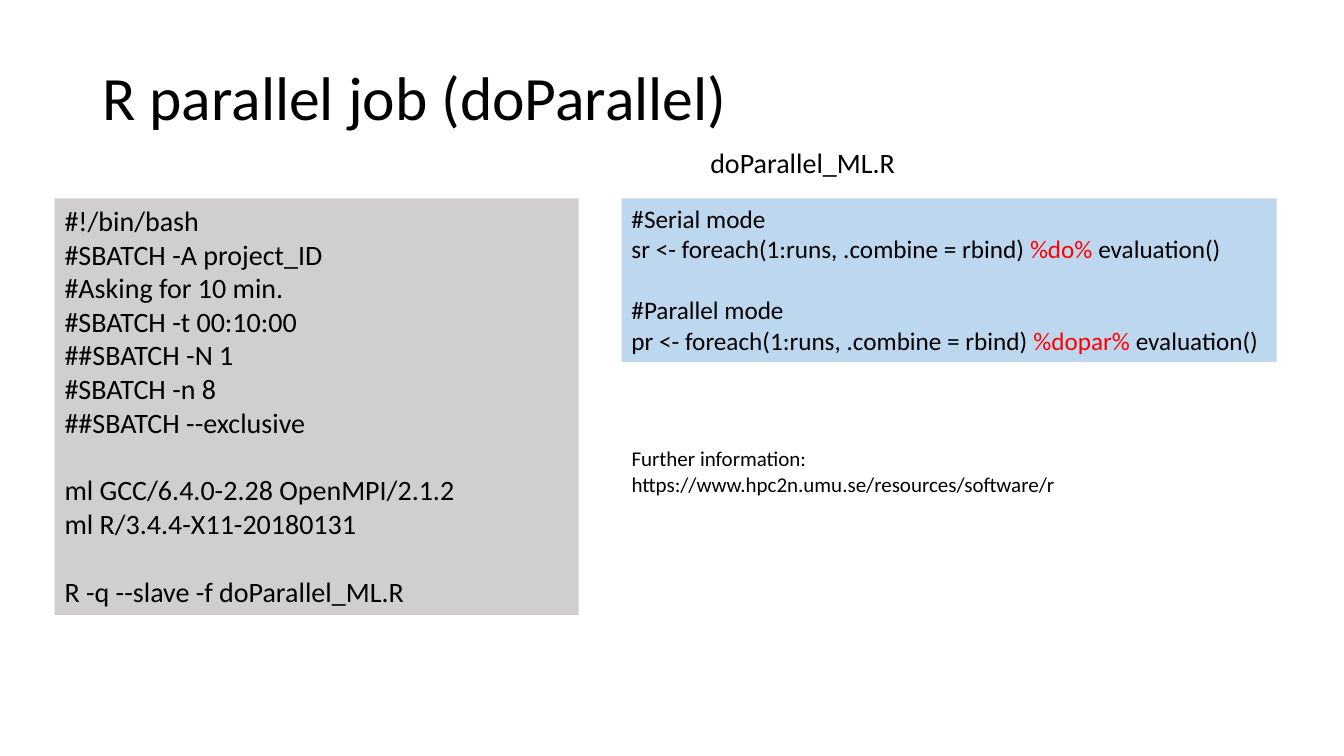
import pptx
import pptx.dml.color
import pptx.enum.shapes
import pptx.enum.text
import pptx.util

PX = 9525  # EMU per px, on a slide of 1280 x 720 px
FONT = "Calibri"
LINE = 1.22  # line height of the font, in ems
COLORS = {"text": "000000", "keyword": "FF0000", "bash": "D0CECE", "r": "BDD7EE"}

# Groups of lines, set apart by one line; a line is text or a list of (text, colour)
BASH_GROUPS = [
    ["#!/bin/bash", "#SBATCH -A project_ID", "#Asking for 10 min.",
     "#SBATCH -t 00:10:00", "##SBATCH -N 1", "#SBATCH -n 8", "##SBATCH --exclusive"],
    ["ml GCC/6.4.0-2.28 OpenMPI/2.1.2", "ml R/3.4.4-X11-20180131"],
    ["R -q --slave -f doParallel_ML.R"],
]


def foreach_line(name, operator):
    return [(f"{name} <- foreach(1:runs, .combine = rbind) ", "text"),
            (f"{operator} ", "keyword"), ("evaluation()", "text")]


R_GROUPS = [
    ["#Serial mode", foreach_line("sr", "%do%")],
    ["#Parallel mode", foreach_line("pr", "%dopar%")],
]


def rgb(name):
    return pptx.dml.color.RGBColor.from_string(COLORS[name])


def add_runs(p, line, size):
    for text, color in [(line, "text")] if isinstance(line, str) else line:
        r = p.add_run()
        r.text = text
        for key, value in {"name": FONT, "size": pptx.util.Pt(size)}.items():
            setattr(r.font, key, value)
        r.font.color.rgb = rgb(color)


def add_label(s, box, text, size, **frame):
    tf = s.shapes.add_textbox(*(v * PX for v in box)).text_frame
    for key, value in {"word_wrap": True, **frame}.items():
        setattr(tf, key, value)
    add_runs(tf.paragraphs[0], text, size)
    return tf


def add_title(s, box, text):
    tf = add_label(s, box, text, 44, vertical_anchor=pptx.enum.text.MSO_ANCHOR.MIDDLE)
    tf.paragraphs[0].line_spacing = 0.9


def add_code_panel(s, box, groups, size, fill):
    sp = s.shapes.add_shape(pptx.enum.shapes.MSO_SHAPE.RECTANGLE, *(v * PX for v in box))
    sp.shadow.inherit = False
    sp.fill.solid()
    sp.fill.fore_color.rgb = rgb(fill)
    sp.line.fill.background()
    tf = sp.text_frame
    tf.word_wrap = True
    tf.vertical_anchor = pptx.enum.text.MSO_ANCHOR.TOP
    for g, group in enumerate(groups):
        for i, line in enumerate(group):
            p = tf.paragraphs[0] if g == i == 0 else tf.add_paragraph()
            p.alignment = pptx.enum.text.PP_ALIGN.LEFT
            if g and i == 0:
                p.space_before = pptx.util.Pt(round(size * LINE, 1))
            add_runs(p, line, size)


def add_r_column(s, box):
    x, y, w, h = box
    add_label(s, (x + 75, y - 55, 470, 42), "doParallel_ML.R", 20)
    add_code_panel(s, box, R_GROUPS, 18, "r")
    add_label(s, (x, y + h + 75, 525, 59),
              "Further information: https://www.hpc2n.umu.se/resources/software/r", 15)


def main():
    prs = pptx.Presentation()
    prs.slide_width, prs.slide_height = 1280 * PX, 720 * PX
    s = prs.slides.add_slide(prs.slide_layouts[6])
    add_title(s, (88, 38, 1104, 115), "R parallel job (doParallel)")
    # Batch script on the left, R code on the right
    add_code_panel(s, (52, 189, 499, 397), BASH_GROUPS, 20, "bash")
    add_r_column(s, (592, 189, 624, 156))
    prs.save("out.pptx")


if __name__ == "__main__":
    main()
